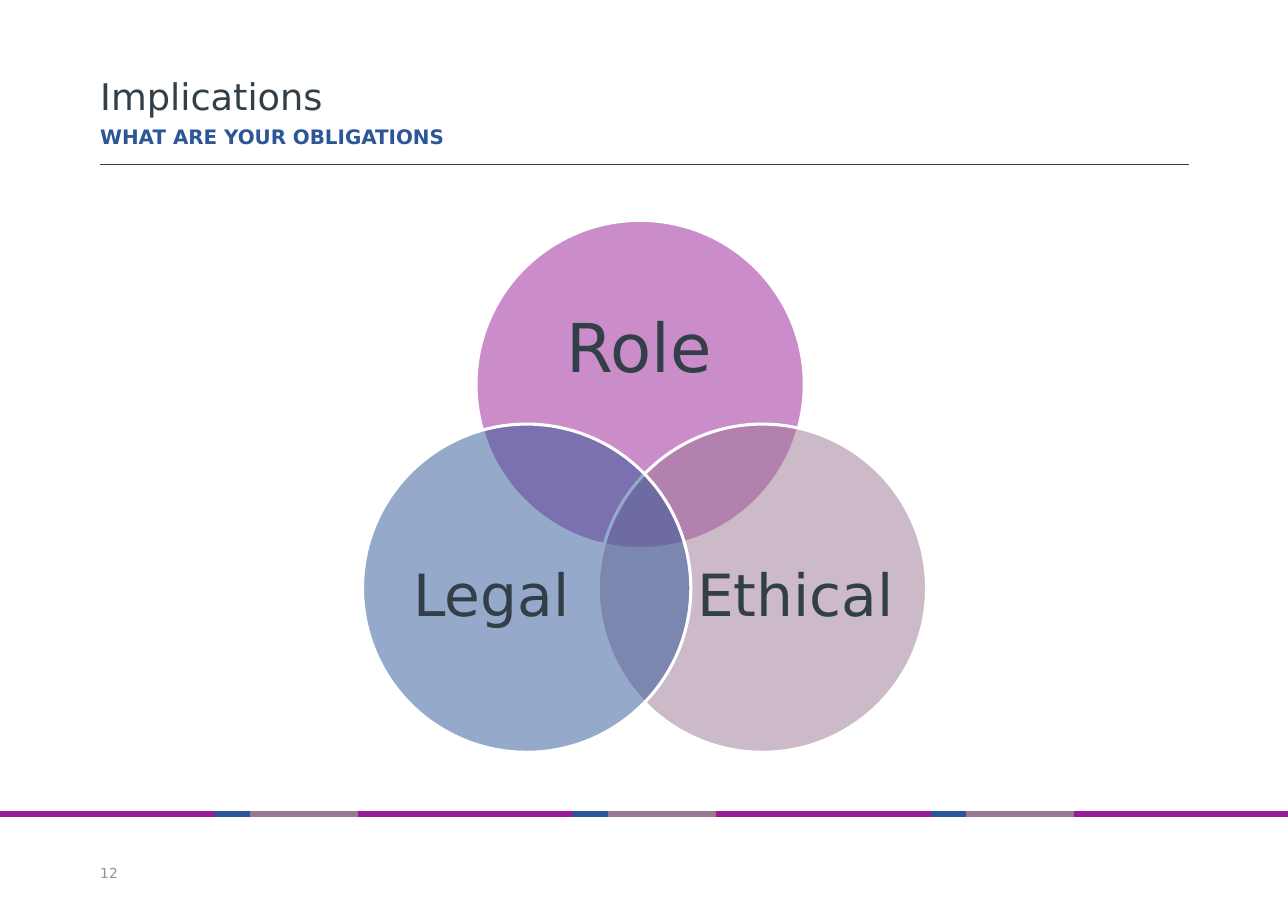
from dataclasses import dataclass
from itertools import cycle

from lxml import etree
from pptx import Presentation
from pptx import util as u
from pptx.dml.color import RGBColor
from pptx.enum import shapes, text
from pptx.oxml import ns

PX = 9144
WIDTH, HEIGHT = 1169, 827
MARGIN, CONTENT_WIDTH = 91, 988
STRIPE_Y = 739
DIAMETER = 298
FONT = "DejaVu Sans"
INK, PURPLE, BLUE, MAUVE = "333F48", "981D97", "2C5697", "9B7793"
GREY, WHITE = "909395", "FFFFFF"


@dataclass
class Label:
    text: str
    box: tuple[int, int, int, int]
    size: int
    color: str = INK
    bold: bool = False
    align: text.PP_ALIGN = text.PP_ALIGN.LEFT
    anchor: text.MSO_ANCHOR = text.MSO_ANCHOR.TOP
    spacing: float = 1.0
    wrap: bool = True


@dataclass
class Circle:
    left: int
    top: int
    color: str
    text: str
    box: tuple[int, int, int, int]
    size: int


LABELS = [
    Label("Implications", (MARGIN, 67, CONTENT_WIDTH, 43), 24),
    Label("WHAT ARE YOUR OBLIGATIONS", (MARGIN, 113, CONTENT_WIDTH, 25), 13, BLUE, bold=True),
    Label("12", (MARGIN, 772, 28, 28), 9, GREY, anchor=text.MSO_ANCHOR.BOTTOM, wrap=False),
]
CIRCLES = [
    Circle(432, 200, PURPLE, "Role", (471, 251, 218, 134), 44),
    Circle(543, 385, MAUVE, "Ethical", (621, 461, 202, 164), 38),
    Circle(329, 385, BLUE, "Legal", (345, 461, 202, 164), 38),
]
STRIPES = [(195, PURPLE), (32, BLUE), (98, MAUVE)]


def px(n: int) -> u.Emu:
    return u.Emu(n * PX)


def rgb(color: str) -> RGBColor:
    return RGBColor.from_string(color)


def add_line(slide, left: int, right: int, y: int, color: str, weight: float) -> None:
    line = slide.shapes.add_connector(
        shapes.MSO_CONNECTOR.STRAIGHT, px(left), px(y), px(right), px(y)
    )
    line.line.color.rgb = rgb(color)
    line.line.width = u.Pt(weight)
    etree.SubElement(line._element.spPr, ns.qn("a:effectLst"))


def add_stripes(slide) -> None:
    left = 0
    for width, color in cycle(STRIPES):
        right = min(left + width, WIDTH)
        add_line(slide, left, right, STRIPE_Y, color, 4)
        left = right
        if left == WIDTH:
            break


def add_label(slide, label: Label) -> None:
    tf = slide.shapes.add_textbox(*map(px, label.box)).text_frame
    tf.margin_left = tf.margin_right = tf.margin_top = tf.margin_bottom = 0
    tf.word_wrap = label.wrap
    tf.vertical_anchor = label.anchor
    p = tf.paragraphs[0]
    p.text = label.text
    p.alignment = label.align
    p.line_spacing = label.spacing
    p.font.name = FONT
    p.font.size = u.Pt(label.size)
    p.font.bold = label.bold
    p.font.color.rgb = rgb(label.color)


def add_circle(slide, circle: Circle) -> None:
    sp = slide.shapes.add_shape(
        shapes.MSO_SHAPE.OVAL, px(circle.left), px(circle.top), px(DIAMETER), px(DIAMETER)
    )
    sp.shadow.inherit = False
    sp.fill.solid()
    sp.fill.fore_color.rgb = rgb(circle.color)
    fill = sp._element.spPr.find(ns.qn("a:solidFill"))
    etree.SubElement(fill[0], ns.qn("a:alpha"), val="50000")
    sp.line.color.rgb = rgb(WHITE)
    sp.line.width = u.Pt(2)
    add_label(
        slide,
        Label(
            circle.text,
            circle.box,
            circle.size,
            align=text.PP_ALIGN.CENTER,
            anchor=text.MSO_ANCHOR.MIDDLE,
            spacing=0.9,
        ),
    )


def main() -> None:
    prs = Presentation()
    prs.slide_width, prs.slide_height = px(WIDTH), px(HEIGHT)
    slide = prs.slides.add_slide(prs.slide_layouts[6])
    add_stripes(slide)
    add_line(slide, MARGIN, MARGIN + CONTENT_WIDTH, 149, INK, 0.25)
    for circle in CIRCLES:
        add_circle(slide, circle)
    for label in LABELS:
        add_label(slide, label)
    prs.save("out.pptx")


if __name__ == "__main__":
    main()
